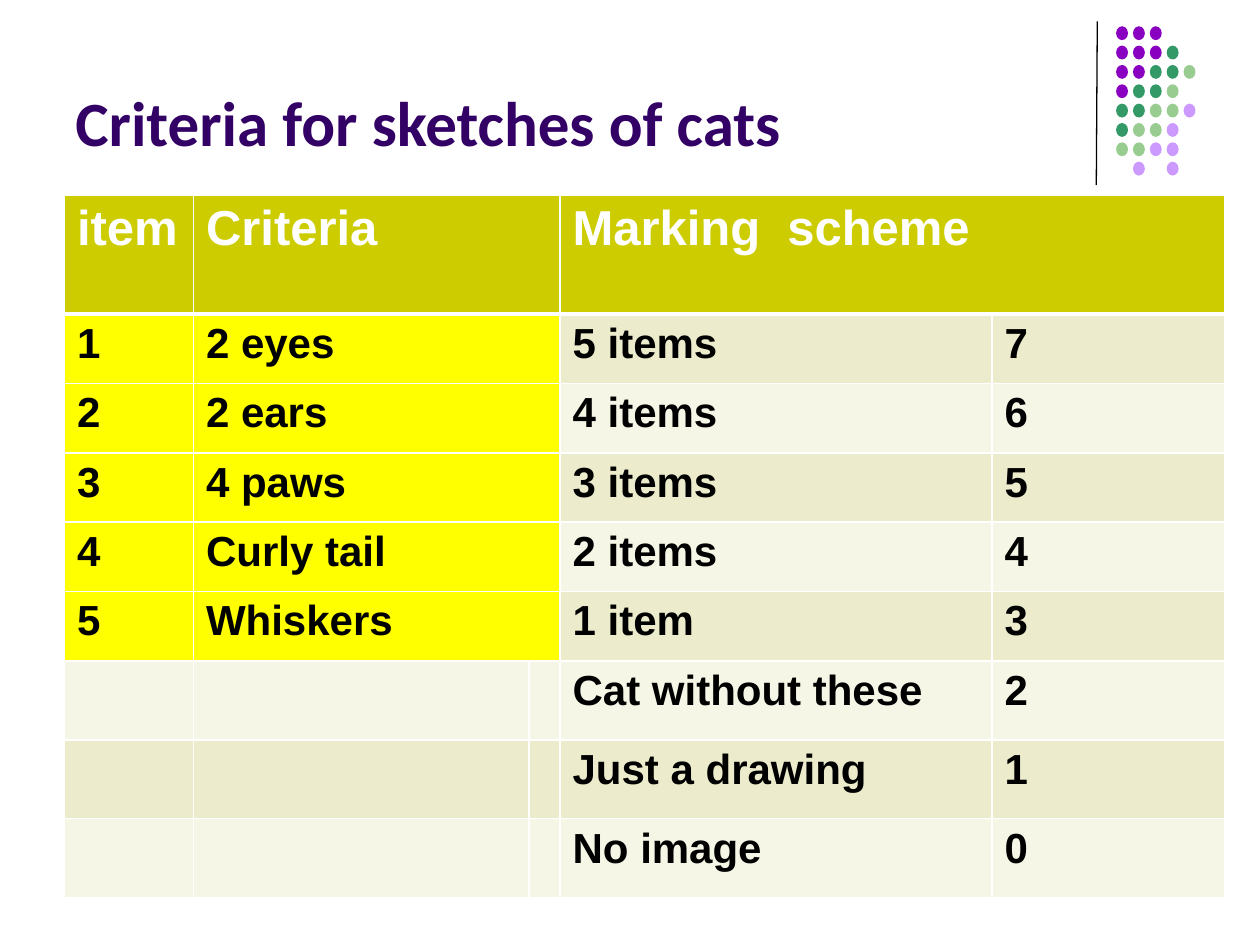
from typing import NamedTuple

from lxml.etree import SubElement
from pptx import Presentation
from pptx.dml.color import RGBColor
from pptx.enum.shapes import MSO_CONNECTOR as Connector, MSO_SHAPE as Shape
from pptx.enum.text import MSO_ANCHOR as Anchor
from pptx.oxml.ns import qn
from pptx.slide import Slide
from pptx.table import _Cell as Cell
from pptx.util import Cm, Pt

BLACK = RGBColor(0x00, 0x00, 0x00)
WHITE = RGBColor(0xFF, 0xFF, 0xFF)
INDIGO = RGBColor(0x33, 0x00, 0x66)
PURPLE = RGBColor(0x8A, 0x00, 0xC0)
GREEN = RGBColor(0x33, 0x99, 0x66)
LIGHT_GREEN = RGBColor(0x99, 0xCC, 0x91)
LILAC = RGBColor(0xCC, 0x99, 0xFF)
OLIVE = RGBColor(0xCC, 0xCC, 0x00)
YELLOW = RGBColor(0xFF, 0xFF, 0x00)
DARK_BAND = RGBColor(0xEC, 0xEC, 0xCC)
LIGHT_BAND = RGBColor(0xF6, 0xF6, 0xE7)

DOT_COLORS = {"P": PURPLE, "G": GREEN, "L": LIGHT_GREEN, "V": LILAC}
DOT_ROWS = ("PPP", "PPPG", "PPGGL", "PGGL", "GGLLV", "GLLV", "LLVV", ".V.V")

COLUMN_WIDTHS = (2.6, 6.76, 0.63, 8.71, 4.68)
HEADER_HEIGHT = 2.4
CRITERION_HEIGHT = 1.4
LAST_HEIGHT = 1.59


class Row(NamedTuple):
    item: str
    criterion: str
    scheme: str
    mark: str = ""


HEADER = Row("item", "Criteria", "Marking  scheme")
ROWS = (
    Row("1", "2 eyes", "5 items", "7"),
    Row("2", "2 ears", "4 items", "6"),
    Row("3", "4 paws", "3 items", "5"),
    Row("4", "Curly tail", "2 items", "4"),
    Row("5", "Whiskers", "1 item", "3"),
    Row("", "", "Cat without these", "2"),
    Row("", "", "Just a drawing", "1"),
    Row("", "", "No image", "0"),
)


def add_rule(slide: Slide) -> None:
    rule = slide.shapes.add_connector(
        Connector.STRAIGHT, Cm(22.12), Cm(0.43), Cm(22.1), Cm(3.73))
    rule.line.color.rgb = BLACK
    rule.line.width = Pt(0.75)
    SubElement(rule._element.spPr, qn("a:effectLst"))


def add_dots(slide: Slide) -> None:
    group = slide.shapes.add_group_shape()
    for row, codes in enumerate(DOT_ROWS):
        for column, code in enumerate(codes):
            if code not in DOT_COLORS:
                continue
            dot = group.shapes.add_shape(
                Shape.OVAL, Cm(22.5 + 0.34 * column), Cm(0.53 + 0.39 * row),
                Cm(0.24), Cm(0.28))
            dot.shadow.inherit = False
            dot.fill.solid()
            dot.fill.fore_color.rgb = DOT_COLORS[code]
            dot.line.fill.background()


def add_title(slide: Slide, text: str) -> None:
    box = slide.shapes.add_textbox(Cm(1.27), Cm(0.33), Cm(20.96), Cm(3))
    frame = box.text_frame
    frame.word_wrap = True
    frame.vertical_anchor = Anchor.BOTTOM
    frame.text = text
    font = frame.paragraphs[0].runs[0].font
    font.name, font.size, font.bold = "Calibri", Pt(36), True
    font.color.rgb = INDIGO


def add_borders(cell: Cell, bottom: float) -> None:
    """Draw white cell borders; call before the fill, which must follow them."""
    properties = cell._tc.get_or_add_tcPr()
    for side, width in (("L", 1), ("R", 1), ("T", 1), ("B", bottom)):
        line = SubElement(properties, qn(f"a:ln{side}"), w=str(Pt(width)))
        fill = SubElement(line, qn("a:solidFill"))
        SubElement(fill, qn("a:srgbClr"), val=str(WHITE))


def fill_cell(cell: Cell, text: str, fill: RGBColor, is_header: bool) -> None:
    add_borders(cell, 3 if is_header else 1)
    cell.fill.solid()
    cell.fill.fore_color.rgb = fill
    cell.text = text
    for run in cell.text_frame.paragraphs[0].runs:
        run.font.name, run.font.bold = "Arial", True
        run.font.size = Pt(28 if is_header else 24)
        run.font.color.rgb = WHITE if is_header else BLACK


def add_criteria_table(slide: Slide) -> None:
    heights = [HEADER_HEIGHT] + [
        CRITERION_HEIGHT if row.item else LAST_HEIGHT for row in ROWS]
    table = slide.shapes.add_table(
        len(heights), len(COLUMN_WIDTHS), Cm(1.3), Cm(3.93),
        Cm(sum(COLUMN_WIDTHS)), Cm(sum(heights))).table
    table.horz_banding = False
    for column, width in zip(table.columns, COLUMN_WIDTHS):
        column.width = Cm(width)

    for index, (row, height) in enumerate(zip((HEADER, *ROWS), heights)):
        table.rows[index].height = Cm(height)
        is_header = index == 0
        band = OLIVE if is_header else DARK_BAND if index % 2 else LIGHT_BAND
        item_fill = YELLOW if row.item and not is_header else band
        texts = (row.item, row.criterion, "", row.scheme, row.mark)
        for column, text in enumerate(texts):
            fill = item_fill if column < 3 else band
            fill_cell(table.cell(index, column), text, fill, is_header)
        if row.item:
            table.cell(index, 1).merge(table.cell(index, 2))
    table.cell(0, 3).merge(table.cell(0, 4))


def main() -> None:
    presentation = Presentation()
    presentation.slide_width, presentation.slide_height = Cm(25.4), Cm(19.05)
    slide = presentation.slides.add_slide(presentation.slide_layouts[6])
    add_rule(slide)
    add_dots(slide)
    add_title(slide, "Criteria for sketches of cats")
    add_criteria_table(slide)
    presentation.save("out.pptx")


if __name__ == "__main__":
    main()
